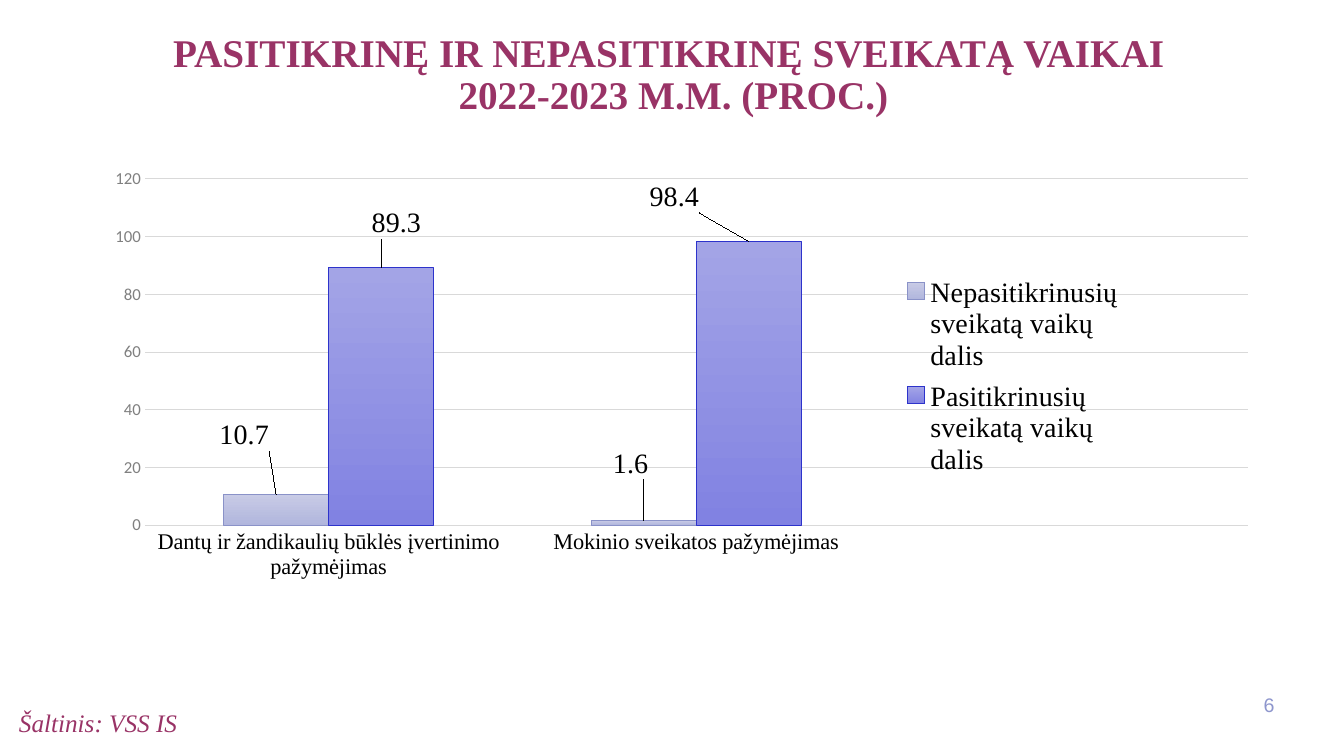
from lxml import etree
from pptx import Presentation
from pptx.chart.data import CategoryChartData
from pptx.dml.color import RGBColor
from pptx.enum.chart import (XL_CHART_TYPE as ChartType, XL_LABEL_POSITION as LabelPos,
                             XL_LEGEND_POSITION as LegendPos, XL_TICK_MARK as Tick)
from pptx.enum.text import MSO_ANCHOR as Anchor, MSO_AUTO_SIZE as AutoSize, PP_ALIGN as Align
from pptx.oxml.ns import qn
from pptx.util import Inches, Pt

PLUM = RGBColor(0x99, 0x33, 0x66)
LILAC = RGBColor(0x8E, 0x96, 0xCD)
BLACK = RGBColor(0, 0, 0)
GREY = RGBColor(0x80, 0x80, 0x80)
GRID = RGBColor(0xD9, 0xD9, 0xD9)
PALE_TOP, PALE_BOTTOM = RGBColor(0xC8, 0xCB, 0xE6), RGBColor(0xB1, 0xB6, 0xDD)
PALE_LINE = RGBColor(0x8A, 0x92, 0xC8)
BLUE_TOP, BLUE_BOTTOM = RGBColor(0xA3, 0xA4, 0xE6), RGBColor(0x81, 0x82, 0xE2)
BLUE_LINE = RGBColor(0x2D, 0x33, 0xCB)
SERIF = "Times New Roman"

# The empty third category leaves room for the legend
CATEGORIES = ["Dantų ir žandikaulių būklės įvertinimo pažymėjimas",
              "Mokinio sveikatos pažymėjimas", ""]
# Name, values, (top, bottom, line) colours, label offsets as shares of the chart
SERIES = [
    ("Nepasitikrinusių sveikatą vaikų dalis", (10.7, 1.6, None),
     (PALE_TOP, PALE_BOTTOM, PALE_LINE), ((-0.027, -0.072), (-0.011, -0.068))),
    ("Pasitikrinusių sveikatą vaikų dalis", (89.3, 98.4, None),
     (BLUE_TOP, BLUE_BOTTOM, BLUE_LINE), ((0.013, -0.045), (-0.063, -0.045))),
]


def set_font(font, name, size, color, bold=False, italic=False):
    font.name, font.size = name, Pt(size)
    font.color.rgb = color
    font.bold, font.italic = bold, italic


def add_title(s, text):
    title = s.shapes.title
    title.left, title.top = Inches(-0.12), Inches(0.28)
    title.width, title.height = Inches(13.5), Inches(1.38)
    tf = title.text_frame
    tf.auto_size, tf.vertical_anchor = AutoSize.NONE, Anchor.TOP
    p = tf.paragraphs[0]
    p.text = text
    p.alignment, p.line_spacing = Align.CENTER, 0.9
    set_font(p.font, SERIF, 28, PLUM, bold=True)


def add_label(s, text, box, font, size, color, align=Align.LEFT, italic=False):
    tf = s.shapes.add_textbox(*map(Inches, box)).text_frame
    tf.word_wrap, tf.vertical_anchor = True, Anchor.MIDDLE
    p = tf.paragraphs[0]
    p.text, p.alignment = text, align
    set_font(p.font, font, size, color, italic=italic)


def make_layout(**settings):
    layout = etree.Element(qn("c:layout"))
    manual = etree.SubElement(layout, qn("c:manualLayout"))
    for tag, value in settings.items():
        etree.SubElement(manual, qn(f"c:{tag}")).set("val", str(value))
    return layout


def place(parent, index, **settings):
    for old in parent.findall(qn("c:layout")):
        parent.remove(old)
    parent.insert(index, make_layout(**settings))


def format_series(series, colors, offsets):
    top, bottom, line = colors
    fill = series.format.fill
    fill.gradient()
    fill.gradient_angle = 270
    for stop, color in zip(fill.gradient_stops, (top, bottom)):
        stop.color.rgb = color
    series.format.line.color.rgb = line
    series.format.line.width = Pt(0.75)
    labels = series.data_labels
    labels.show_value = True
    set_font(labels.font, "Calibri", 12, GREY)
    for i, (x, y) in enumerate(offsets):
        label = series.points[i].data_label
        set_font(label.font, SERIF, 20, BLACK)
        label.position = LabelPos.OUTSIDE_END
    for dLbl, (x, y) in zip(labels._element.findall(qn("c:dLbl")), offsets):
        place(dLbl, 1, x=x, y=y)


def format_axes(chart):
    cat, val = chart.category_axis, chart.value_axis
    for axis in (cat, val):
        axis.major_tick_mark = axis.minor_tick_mark = Tick.NONE
        axis.format.line.fill.background()
    set_font(cat.tick_labels.font, SERIF, 16, BLACK)
    set_font(val.tick_labels.font, "Calibri", 12, GREY)
    val.minimum_scale, val.maximum_scale, val.major_unit = 0, 120, 20
    val.major_gridlines.format.line.color.rgb = GRID
    val.major_gridlines.format.line.width = Pt(0.75)


def add_column_chart(s):
    data = CategoryChartData()
    data.categories = CATEGORIES
    for name, values, *_ in SERIES:
        data.add_series(name, values)
    box = map(Inches, (0.91, 1.57, 11.71, 5.41))
    chart = s.shapes.add_chart(ChartType.COLUMN_CLUSTERED, *box, data).chart
    chart.has_title = False
    set_font(chart.font, "Calibri", 10, BLACK)
    plot = chart.plots[0]
    plot.gap_width, plot.overlap, plot.vary_by_categories = 150, 0, False
    for series, (_, _, colors, offsets) in zip(plot.series, SERIES):
        format_series(series, colors, offsets)
    format_axes(chart)

    # Legend lies over the empty category
    chart.has_legend = True
    legend = chart.legend
    legend.position, legend.include_in_layout = LegendPos.BOTTOM, False
    set_font(legend.font, SERIF, 20, BLACK)
    place(legend._element, 1, xMode="edge", yMode="edge", x=0.68, y=0.2, w=0.2, h=0.4)
    plot_area = chart._chartSpace.chart.plotArea
    place(plot_area, 0, layoutTarget="inner", xMode="edge", yMode="edge",
          x=0.045, y=0.038, w=0.934, h=0.635)


def main():
    prs = Presentation()
    prs.slide_width, prs.slide_height = Inches(13.33), Inches(7.5)
    s = prs.slides.add_slide(prs.slide_layouts[5])
    add_title(s, "PASITIKRINĘ IR NEPASITIKRINĘ SVEIKATĄ VAIKAI\v 2022-2023 M.M. (PROC.)")
    # Source and page number
    add_label(s, "Šaltinis: VSS IS", (0.09, 6.98, 6.3, 0.38), SERIF, 18, PLUM, italic=True)
    add_label(s, "6", (12.22, 6.79, 0.52, 0.4), "Arial", 14, LILAC, Align.RIGHT)
    add_column_chart(s)
    prs.save("out.pptx")


if __name__ == "__main__":
    main()
